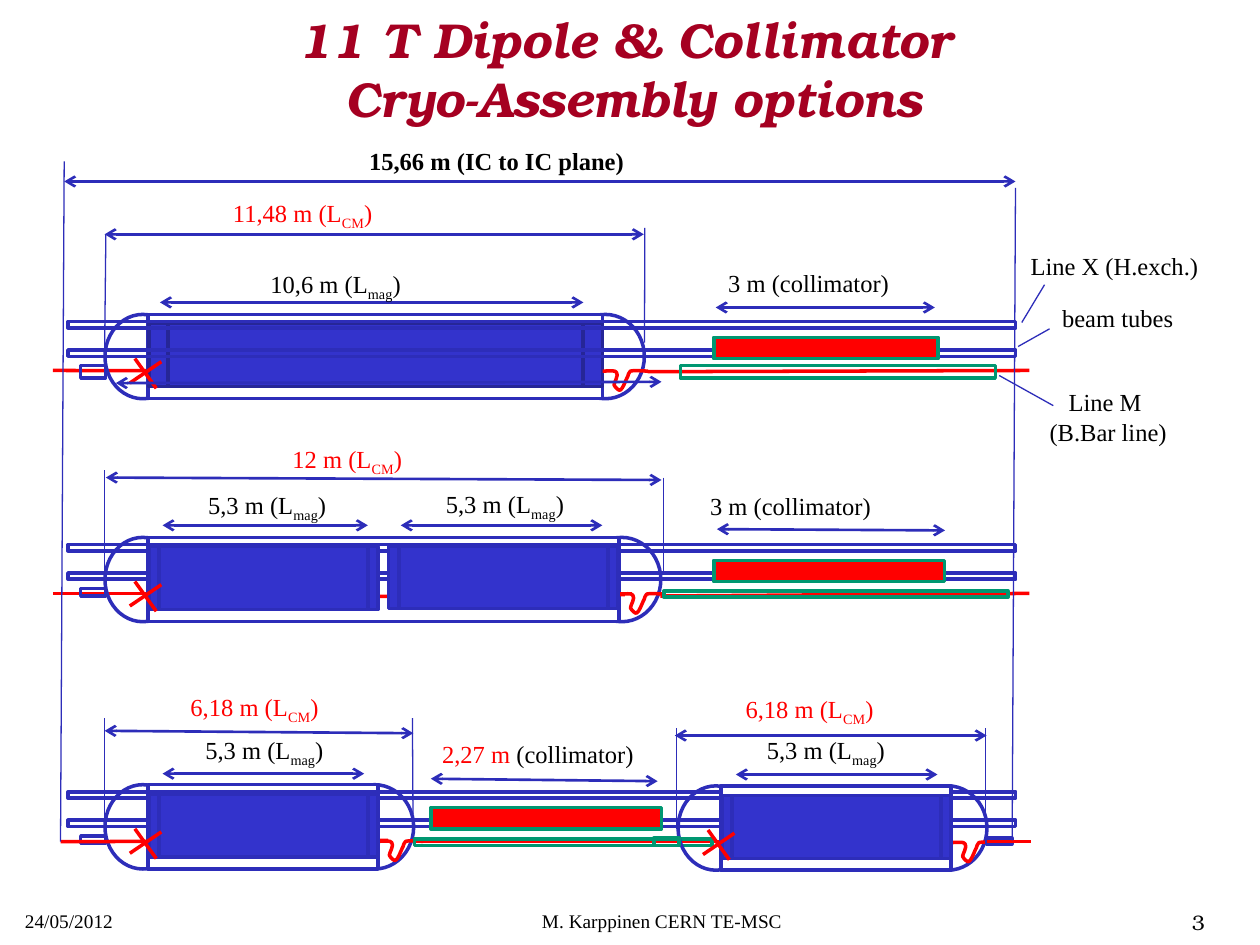
from typing import NamedTuple

from lxml import etree
from pptx import Presentation
from pptx.dml.color import RGBColor
from pptx.enum.shapes import MSO_CONNECTOR, MSO_SHAPE
from pptx.enum.text import MSO_ANCHOR, PP_ALIGN
from pptx.oxml.ns import qn
from pptx.util import Pt

STRAIGHT = MSO_CONNECTOR.STRAIGHT
RECTANGLE, ELLIPSE = MSO_SHAPE.RECTANGLE, MSO_SHAPE.OVAL
LEFT, CENTER, RIGHT = PP_ALIGN.LEFT, PP_ALIGN.CENTER, PP_ALIGN.RIGHT
SERIF, BOOKMAN = "Times New Roman", "TeX Gyre Bonum"
BLACK, WHITE, RED, CRIMSON = "000000", "FFFFFF", "FF0000", "A50021"
BLUE, NAVY, MAGNET_BLUE, GREEN = "2D2DB9", "262697", "3333CC", "009771"
VESSEL_HEIGHT, MAGNET_HEIGHT, MAGNET_LENGTH = 48.2, 36, 131


class Segment(NamedTuple):
    x1: float
    y1: float
    x2: float
    y2: float


class Label(NamedTuple):
    """Text whose second |-separated part is a subscript."""
    text: str
    left: float
    top: float
    width: float
    color: str = BLACK


class Vessel(NamedTuple):
    """Cold mass: straight body with rounded end caps."""
    left: float
    right: float
    top: float
    bulge: float


LONG = Vessel(84.5, 344.4, 179.7, 23.8)
TWIN = Vessel(84.5, 353.8, 307.1, 23.8)
SHORT_LEFT = Vessel(84.5, 216, 448.4, 20.4)
SHORT_RIGHT = Vessel(412, 543.6, 449.1, 20.4)

DIMENSIONS = [
    Segment(36.7, 103.7, 580.3, 103.7), Segment(59.8, 133.9, 367.9, 133.9),
    Segment(91.4, 172.8, 333.4, 172.8), Segment(409, 175.7, 534.2, 175.7),
    Segment(66.2, 218.9, 378, 218.2), Segment(60.5, 272.9, 378, 274.3),
    Segment(92.9, 300.2, 210.2, 300.2), Segment(229, 300.2, 344.2, 300.2),
    Segment(409.7, 302.4, 540, 303.1), Segment(59.8, 417.6, 236.2, 419),
    Segment(92.9, 442.1, 208.1, 442.1), Segment(246.2, 445, 375.8, 446.4),
    Segment(385.6, 420.3, 563.8, 420.3), Segment(420.5, 442.6, 535.7, 442.6),
]
THIN_LINES = [
    Segment(36.7, 92.2, 34.6, 481), Segment(580.3, 107.3, 578.4, 480.2),
    Segment(60.5, 133.9, 59.8, 200.2), Segment(368.5, 130.3, 368.3, 195.8),
    Segment(59.8, 268.6, 59.8, 334.1), Segment(379.2, 272.9, 379.2, 328.3),
    Segment(59.8, 410.4, 59.8, 467.3), Segment(235.7, 410.4, 236, 465.1),
    Segment(386.6, 416.2, 386.6, 473.8), Segment(563, 416.2, 563, 470.9),
    Segment(596.9, 162.7, 583.9, 184.3), Segment(599.8, 187.9, 581.8, 198),
    Segment(601.9, 231.8, 571, 214.6),
]
LABELS = [
    Label("11,48 m (L|CM|)", 126, 109.8, 108.7, RED),
    Label("10,6 m (L|mag|)", 147.4, 150.2, 104.4),
    Label("3 m (collimator)", 409, 149.8, 123.1),
    Label("Line X (H.exch.)", 581.8, 139.7, 123.8),
    Label("beam tubes", 599.8, 169.9, 95),
    Label("12 m (L|CM|)", 160, 250.2, 87.1, RED),
    Label("5,3 m (L|mag|)", 111.8, 276.5, 95),
    Label("5,3 m (L|mag|)", 247.7, 275.8, 95),
    Label("3 m (collimator)", 398.7, 277.2, 127.4),
    Label("6,18 m (L|CM|)", 101.8, 392, 100, RED),
    Label("5,3 m (L|mag|)", 110.2, 416.2, 95),
    Label("6,18 m (L|CM|)", 419, 392.8, 100, RED),
    Label("5,3 m (L|mag|)", 431.1, 416.5, 95),
]
# Cubic curves of the bellows, relative to its start
BELLOWS = [
    ((3.6, 0), (7.2, -0.7), (7.9, 0.7)),
    ((9.4, 2.2), (6.5, 6.5), (6.5, 7.9)),
    ((7.2, 9.4), (9.4, 11.5), (10.1, 10.8)),
    ((11.5, 10.1), (13, 5.8), (13.7, 4.3)),
    ((15.1, 2.2), (14.4, 0.7), (15.8, 0)),
    ((18, -0.7), (22.3, 0), (25.9, 0)),
]


def rgb(value: str) -> RGBColor:
    return RGBColor.from_string(value)


def add_outline(parent, kind, left, top, width, height, line, fill=None):
    shape = parent.shapes.add_shape(kind, Pt(left), Pt(top), Pt(width), Pt(height))
    shape.shadow.inherit = False
    shape.line.color.rgb = rgb(line)
    shape.line.width = Pt(2)
    if fill:
        shape.fill.solid()
        shape.fill.fore_color.rgb = rgb(fill)
    else:
        shape.fill.background()


def add_line(parent, segment: Segment, color: str, width: float, arrows=False):
    line = parent.shapes.add_connector(STRAIGHT, *map(Pt, segment))
    line.line.color.rgb = rgb(color)
    line.line.width = Pt(width)
    if arrows:
        for end in ("a:headEnd", "a:tailEnd"):
            etree.SubElement(line.line._get_or_add_ln(), qn(end), type="arrow")
    etree.SubElement(line._element.spPr, qn("a:effectLst"))


def add_pipe(parent, *ends: float):
    add_line(parent, Segment(*ends), RED, 2)


def add_text(page, left, top, width, height, lines, size=14, font=SERIF,
             color=BLACK, align=LEFT, bold=None, italic=None):
    """Add a text box and return its paragraphs."""
    box = page.shapes.add_textbox(Pt(left), Pt(top), Pt(width), Pt(height))
    frame = box.text_frame
    frame.word_wrap = True
    frame.text = "\n".join(lines)
    for para in frame.paragraphs:
        para.alignment = align
        para.font.size, para.font.name = Pt(size), font
        para.font.bold, para.font.italic = bold, italic
        para.font.color.rgb = rgb(color)
    return frame.paragraphs


def add_label(page, label: Label):
    start, *rest = label.text.split("|")
    para = add_text(page, label.left, label.top, label.width, 24.5, [start],
                    color=label.color)[0]
    for index, part in enumerate(rest):
        span = para.add_run()
        span.text = part
        if index == 0:
            span._r.get_or_add_rPr().set("baseline", "-25000")


def add_vessel(page, vessel: Vessel):
    left, right, top, bulge = vessel
    for cap_left, cap_width in ((right + bulge - 44.6, 44.6), (left - 24.5, 43.2)):
        add_outline(page, ELLIPSE, cap_left, top, cap_width, VESSEL_HEIGHT, BLUE)
    add_outline(page, RECTANGLE, left, top, right - left, VESSEL_HEIGHT, BLUE, WHITE)


def add_magnet(page, left, top, length=MAGNET_LENGTH, end=5.8, line=BLUE):
    """Add a coil block with a narrow end plate on both sides."""
    group = page.shapes.add_group_shape()
    parts = ((left + end, length - 2 * end), (left, end), (left + length - end, end))
    for part_left, width in parts:
        add_outline(group, RECTANGLE, part_left, top, width, MAGNET_HEIGHT,
                    line, MAGNET_BLUE)


def add_cross(page, vessel: Vessel):
    group = page.shapes.add_group_shape()
    left, top = vessel.left, vessel.top
    add_pipe(group, left - 7.4, top + 25.2, left + 4.8, top + 42.2)
    add_pipe(group, left - 10.3, top + 39.2, left + 7.7, top + 27)


def add_bellows(page, vessel: Vessel):
    left, top = vessel.right, vessel.top + 32.4
    points = [(Pt(left + x), Pt(top + y)) for curve in BELLOWS for x, y in curve]
    builder = page.shapes.build_freeform(Pt(left), Pt(top))
    builder.add_line_segments(points, close=False)
    bellows = builder.convert_to_shape()
    bellows.shadow.inherit = False
    bellows.fill.background()
    bellows.line.color.rgb = rgb(RED)
    bellows.line.width = Pt(2)
    corners = list(bellows._element.iter(qn("a:lnTo")))
    outline = corners[0].getparent()
    for first in range(0, len(corners), 3):
        cubic = etree.SubElement(outline, qn("a:cubicBezTo"))
        for corner in corners[first:first + 3]:
            cubic.append(corner[0])
            outline.remove(corner)


def add_row_parts(page, vessel: Vessel, sleeve, collimator, stub_height):
    """Add bus-bar sleeve, beam tubes, collimator and left stub of one row."""
    add_outline(page, RECTANGLE, *sleeve, GREEN)
    for offset in (4.1, 20.3):
        add_outline(page, RECTANGLE, 38.9, vessel.top + offset, 541.6, 3.6, BLUE)
    left, width = collimator
    add_outline(page, RECTANGLE, left, vessel.top + 13.1, width, 12.2, GREEN, RED)
    add_outline(page, RECTANGLE, 46.1, vessel.top + 29.2, 14.2, stub_height, BLUE)


def main():
    deck = Presentation()
    deck.slide_width, deck.slide_height = Pt(720), Pt(540)
    page = deck.slides.add_slide(deck.slide_layouts[6])

    add_pipe(page, 30.2, 211.7, 344.2, 212.4)
    add_vessel(page, LONG)
    add_magnet(page, 85, 184.9, 259.2, 10.9, NAVY)
    add_cross(page, LONG)
    add_bellows(page, LONG)
    add_pipe(page, 370.1, 212.4, 588.2, 211.7)
    add_row_parts(page, LONG, (388.8, 208.8, 180, 7.2), (407.9, 128.2), 7.2)

    add_pipe(page, 30.2, 339.1, 361.4, 339.1)
    add_vessel(page, TWIN)
    add_bellows(page, TWIN)
    add_pipe(page, 377.3, 340.6, 588.2, 339.1)
    add_row_parts(page, TWIN, (379.4, 337.7, 196.6, 3.6), (407.9, 131.8), 4.3)
    add_pipe(page, 152.6, 341.3, 357.1, 339.8)
    add_magnet(page, 222.1, 311.9)
    add_magnet(page, 85, 312.4)
    add_cross(page, TWIN)

    add_vessel(page, SHORT_LEFT)
    add_bellows(page, SHORT_LEFT)
    add_pipe(page, 236.2, 481, 418.3, 481)
    add_row_parts(page, SHORT_LEFT, (236.9, 479.5, 169.9, 3.6), (246.2, 131.8), 4.3)
    add_pipe(page, 34.6, 481, 221.8, 480.2)
    add_magnet(page, 85, 453.9)
    add_cross(page, SHORT_LEFT)
    add_vessel(page, SHORT_RIGHT)
    add_bellows(page, SHORT_RIGHT)
    add_outline(page, RECTANGLE, 373.7, 478.8, 14.4, 4.3, GREEN)
    add_magnet(page, 412.6, 454.7)
    add_cross(page, SHORT_RIGHT)
    add_outline(page, RECTANGLE, 563.8, 478.8, 14.4, 3.6, BLUE)
    add_pipe(page, 563.8, 481, 589, 481)

    for segment in DIMENSIONS:
        add_line(page, segment, BLUE, 1.5, arrows=True)
    for segment in THIN_LINES:
        add_line(page, segment, BLUE, 0.75)
    for label in LABELS:
        add_label(page, label)
    add_text(page, 203.8, 79.9, 191.5, 24.5, ["15,66 m (IC to IC plane)"], bold=True)
    add_text(page, 586.8, 217.9, 92.9, 41, ["Line M ", "(B.Bar line)"], align=CENTER)
    para = add_text(page, 245.5, 419, 145.4, 24.5, ["2,27 m "], color=RED)[0]
    span = para.add_run()
    span.text = "(collimator)"
    span.font.color.rgb = rgb(BLACK)

    add_text(page, 71.3, 5.8, 581.8, 66.2,
             ["11 T Dipole & Collimator \vCryo-Assembly options"],
             28, BOOKMAN, CRIMSON, CENTER, True, True)
    page.shapes[-1].text_frame.vertical_anchor = MSO_ANCHOR.MIDDLE
    add_text(page, 7.2, 516.2, 192.2, 23.8, ["24/05/2012"], 11)
    add_text(page, 210.2, 516.2, 336.2, 23.8, ["M. Karppinen CERN TE-MSC"], 11,
             align=CENTER)
    add_text(page, 545.8, 516.2, 149.8, 23.8, ["3"], 12, BOOKMAN, align=RIGHT)
    deck.save("out.pptx")


if __name__ == "__main__":
    main()
